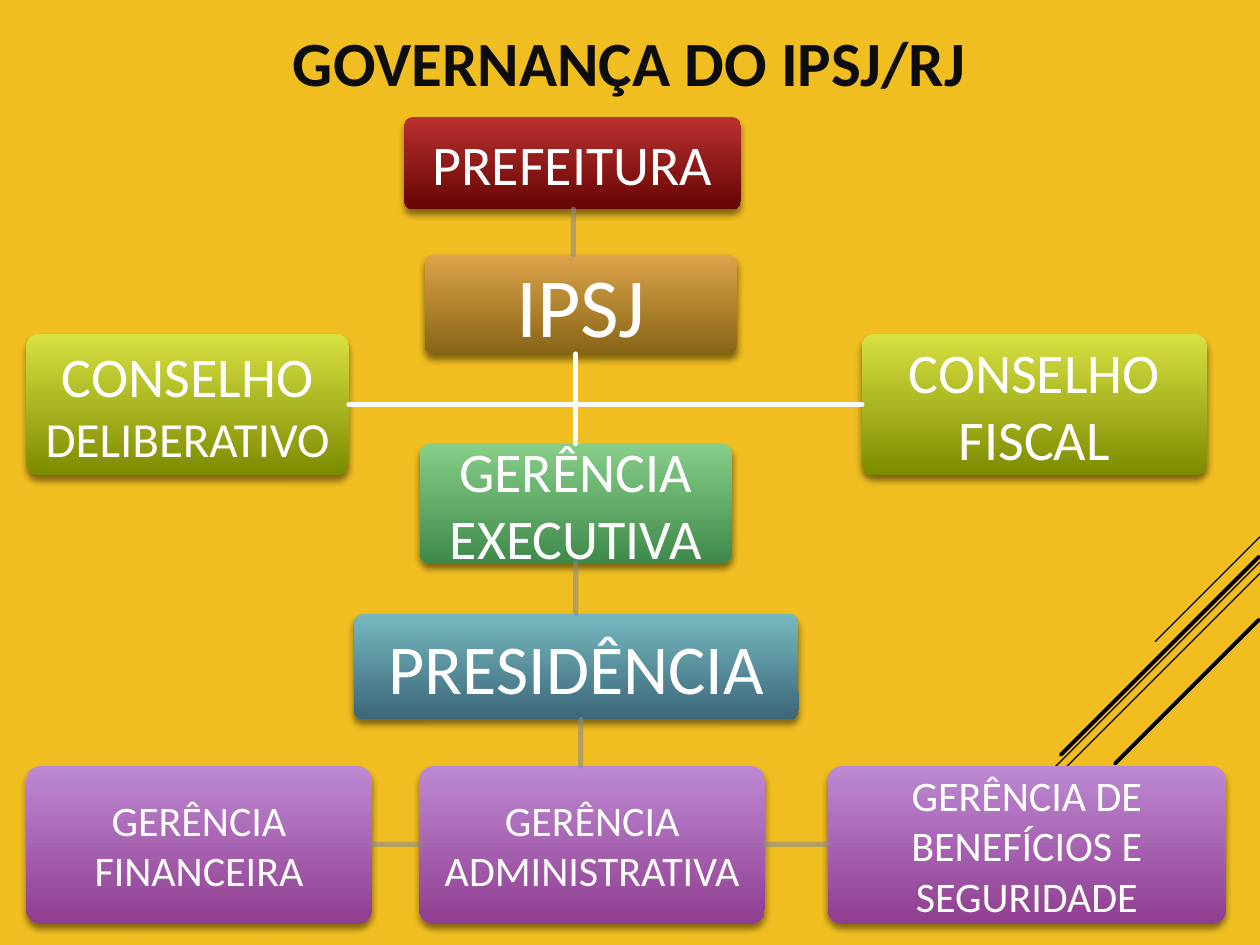
from lxml import etree
from pptx import Presentation
from pptx.dml.color import RGBColor
from pptx.enum.shapes import MSO_CONNECTOR, MSO_SHAPE
from pptx.enum.text import MSO_ANCHOR, PP_ALIGN
from pptx.oxml.ns import qn
from pptx.util import Inches, Pt

STRAIGHT = MSO_CONNECTOR.STRAIGHT
ROUNDED = MSO_SHAPE.ROUNDED_RECTANGLE
MIDDLE, CENTER = MSO_ANCHOR.MIDDLE, PP_ALIGN.CENTER

THEME = {
    "font": "Calibri", "bg": "F0BE21", "title": "0D0D0D", "text": "FFFFFF",
    "black": "000000", "gray": "898989", "white": "FFFFFF",
    "red": ("B93130", "650503"), "gold": ("DCA34A", "886516"),
    "lime": ("D7E142", "7D8B00"), "green": ("87CE88", "3F8A4B"),
    "teal": ("76B8C0", "3C6779"), "purple": ("BD89D3", "903E90"),
    "xl": 48, "l": 40, "title_size": 36, "m": 32, "s": 28, "xs": 24,
}

# Grid: (left, width) of columns and (top, height) of rows, in inches
COLS = {"left": (0.21, 2.56), "right": (6.84, 2.74),
        "top": (3.21, 2.67), "institute": (3.37, 2.48),
        "executive": (3.33, 2.48), "president": (2.81, 3.53),
        "dept1": (0.21, 2.74), "dept2": (3.33, 2.74), "dept3": (6.57, 3.16)}
ROWS = {"city": (0.93, 0.73), "institute": (2.02, 0.79),
        "council": (2.65, 1.12), "executive": (3.52, 0.95),
        "president": (4.87, 0.84), "dept": (6.08, 1.25)}

TITLE = "GOVERNANÇA DO IPSJ/RJ"

# (column, row, gradient, runs as (text, size))
BOXES = [
    ("left", "council", "lime", [("CONSELHO", "m"), (" DELIBERATIVO", "s")]),
    ("institute", "institute", "gold", [("IPSJ", "xl")]),
    ("top", "city", "red", [("PREFEITURA", "m")]),
    ("president", "president", "teal", [("PRESIDÊNCIA", "l")]),
    ("executive", "executive", "green", [("GERÊNCIA EXECUTIVA", "m")]),
    ("right", "council", "lime", [("CONSELHO FISCAL", "m")]),
    ("dept1", "dept", "purple", [("GERÊNCIA FINANCEIRA", "xs")]),
    ("dept2", "dept", "purple", [("GERÊNCIA ADMINISTRATIVA", "xs")]),
    ("dept3", "dept", "purple", [("GERÊNCIA DE BENEFÍCIOS E SEGURIDADE", "xs")]),
]

# Vertical links: (x, upper row, lower row, colour, opacity %)
DROPS = [(4.55, "city", "institute", "gray", 60),
         (4.57, "institute", "executive", "white", 100),
         (4.57, "executive", "president", "gray", 60),
         (4.61, "president", "dept", "gray", 60)]

# Horizontal links: (left column, right column, y, colour, opacity %)
SPANS = [("left", "right", 3.21, "white", 100),
         ("dept1", "dept2", 6.7, "gray", 60),
         ("dept2", "dept3", 6.7, "gray", 60)]

# Diagonal strokes at 45 degrees: (right end x, top y, run, width)
STROKES = [(10, 4.26, 0.83, 0.75), (10, 4.46, 2.7, 0.75),
           (10, 4.55, 1.72, 0.75), (9.99, 4.42, 1.57, 2.25),
           (9.99, 4.92, 1.14, 2.25)]


def rgb(value):
    return RGBColor.from_string(value)


def add_line(s, start, end, color, width, opacity=100):
    line = s.shapes.add_connector(STRAIGHT, *map(Inches, (*start, *end)))
    line.line.color.rgb = rgb(THEME[color])
    line.line.width = Pt(width)
    spPr = line._element.spPr
    ln = spPr.find(qn("a:ln"))
    ln.set("cap", "rnd")
    if opacity < 100:
        clr = ln.find(".//" + qn("a:srgbClr"))
        etree.SubElement(clr, qn("a:alpha"), val=str(opacity * 1000))
    etree.SubElement(spPr, qn("a:effectLst"))


def add_shadow(sp):
    sp.shadow.inherit = False
    effects = sp._element.spPr.find(qn("a:effectLst"))
    shadow = etree.SubElement(effects, qn("a:outerShdw"), blurRad=str(Pt(4)),
                              dist=str(Pt(3)), dir="5400000", rotWithShape="0")
    clr = etree.SubElement(shadow, qn("a:srgbClr"), val=THEME["black"])
    etree.SubElement(clr, qn("a:alpha"), val="46000")


def add_text(sp, runs, color, bold=False):
    tf = sp.text_frame
    tf.word_wrap = True
    tf.vertical_anchor = MIDDLE
    p = tf.paragraphs[0]
    p.alignment = CENTER
    for text, size in runs:
        r = p.add_run()
        r.text = text
        r.font.name = THEME["font"]
        r.font.size = Pt(THEME[size])
        r.font.bold = bold
        r.font.color.rgb = rgb(THEME[color])
    return p


def add_box(s, col, row, gradient, runs):
    (x, w), (y, h) = COLS[col], ROWS[row]
    sp = s.shapes.add_shape(ROUNDED, *map(Inches, (x, y, w, h)))
    sp.adjustments[0] = 0.09
    sp.fill.gradient()
    sp.fill.gradient_angle = 270
    for stop, color in zip(sp.fill.gradient_stops, THEME[gradient]):
        stop.color.rgb = rgb(color)
    sp.line.fill.background()
    add_shadow(sp)
    add_text(sp, runs, "text")


def main():
    prs = Presentation()
    prs.slide_width, prs.slide_height = Inches(10), Inches(7.5)
    s = prs.slides.add_slide(prs.slide_layouts[6])
    s.background.fill.solid()
    s.background.fill.fore_color.rgb = rgb(THEME["bg"])

    # Diagonal decoration
    for x, y, run, width in STROKES:
        add_line(s, (x, y), (x - run, y + run), "black", width)

    # Title
    tb = s.shapes.add_textbox(*map(Inches, (0.41, 0.16, 9.17, 0.73)))
    p = add_text(tb, [(TITLE, "title_size")], "title", bold=True)
    p.line_spacing = 0.9

    # Organisation boxes
    for box in BOXES:
        add_box(s, *box)

    # Links between box edges
    for x, upper, lower, color, opacity in DROPS:
        add_line(s, (x, sum(ROWS[upper])), (x, ROWS[lower][0]), color, 3, opacity)
    for left, right, y, color, opacity in SPANS:
        add_line(s, (sum(COLS[left]), y), (COLS[right][0], y), color, 3, opacity)

    prs.save("out.pptx")


if __name__ == "__main__":
    main()
